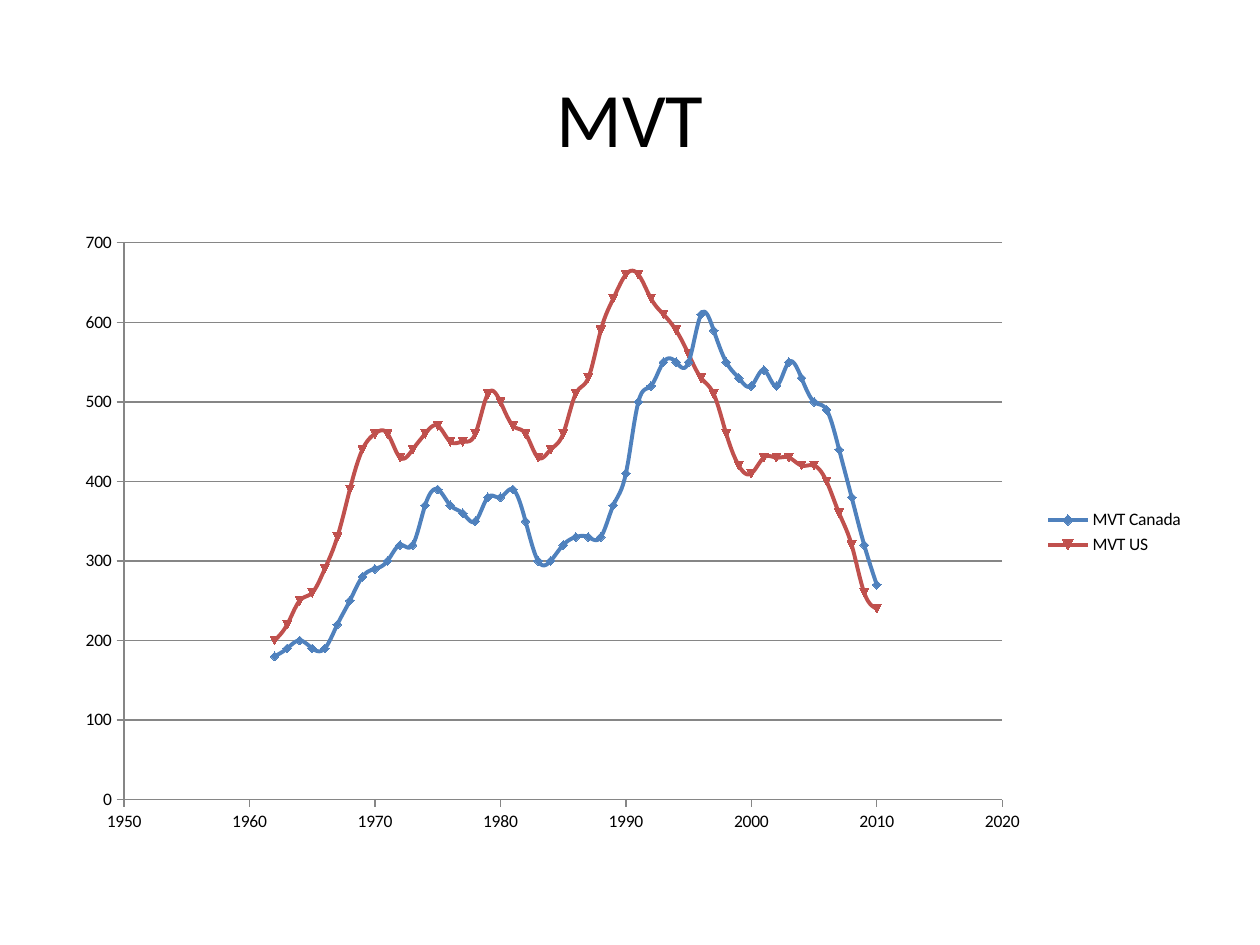
from pptx import Presentation
from pptx.chart.data import XyChartData
from pptx.dml.color import RGBColor
from pptx.enum import chart as ch, text as tx
from pptx.oxml.ns import qn
from pptx.util import Inches, Pt

HUES = {"text": "000000", "grid": "868686", "MVT Canada": "4F81BD", "MVT US": "C0504D"}
FACE = "Calibri"
START = 1962
RATES = {
    "MVT Canada": [
        180, 190, 200, 190, 190, 220, 250, 280, 290, 300, 320, 320, 370,
        390, 370, 360, 350, 380, 380, 390, 350, 300, 300, 320, 330, 330,
        330, 370, 410, 500, 520, 550, 550, 550, 610, 590, 550, 530, 520,
        540, 520, 550, 530, 500, 490, 440, 380, 320, 270],
    "MVT US": [
        200, 220, 250, 260, 290, 330, 390, 440, 460, 460, 430, 440, 460,
        470, 450, 450, 460, 510, 500, 470, 460, 430, 440, 460, 510, 530,
        590, 630, 660, 660, 630, 610, 590, 560, 530, 510, 460, 420, 410,
        430, 430, 430, 420, 420, 400, 360, 320, 260, 240],
}


def hue(name):
    """Return the named colour."""
    return RGBColor.from_string(HUES[name])


def style(font, size):
    """Set the face, size and colour of a font."""
    font.name, font.size = FACE, Pt(size)
    font.color.rgb = hue("text")


def write(slide, words, box, size=44, align=tx.PP_ALIGN.CENTER):
    """Place one line of text in a box."""
    frame = slide.shapes.add_textbox(*map(Inches, box)).text_frame
    frame.word_wrap = True
    frame.vertical_anchor = tx.MSO_ANCHOR.MIDDLE
    par = frame.paragraphs[0]
    par.alignment = align
    run = par.add_run()
    run.text = words
    style(run.font, size)


def stroke(line, name, width):
    """Set the colour and width of a line."""
    line.color.rgb = hue(name)
    line.width = Pt(width)


def scale(axis, low, high, step):
    """Set the range and ticks of an axis."""
    axis.minimum_scale, axis.maximum_scale = low, high
    axis.major_unit = step
    axis.major_tick_mark = ch.XL_TICK_MARK.OUTSIDE
    axis.minor_tick_mark = ch.XL_TICK_MARK.NONE
    axis.tick_labels.number_format = "General"
    axis.tick_labels.number_format_is_linked = False
    stroke(axis.format.line, "grid", 0.75)


def plot(slide, box):
    """Draw the smoothed rates by year in a box."""
    data = XyChartData()
    for name, rates in RATES.items():
        row = data.add_series(name)
        for year, rate in enumerate(rates, START):
            row.add_data_point(year, rate)
    chart = slide.shapes.add_chart(
        ch.XL_CHART_TYPE.XY_SCATTER_SMOOTH, *map(Inches, box), data).chart
    style(chart.font, 10)
    chart.has_title = False
    chart.has_legend = True
    chart.legend.position = ch.XL_LEGEND_POSITION.RIGHT
    chart.legend.include_in_layout = False
    scale(chart.category_axis, 1950, 2020, 10)
    scale(chart.value_axis, 0, 700, 100)
    chart.category_axis.has_major_gridlines = False
    chart.value_axis.has_major_gridlines = True
    stroke(chart.value_axis.major_gridlines.format.line, "grid", 0.75)
    chart.plots[0].vary_by_categories = False
    for row in chart.plots[0].series:
        stroke(row.format.line, row.name, 2.25)
        mark = row.marker.format
        mark.fill.solid()
        mark.fill.fore_color.rgb = hue(row.name)
        stroke(mark.line, row.name, 0.75)
        for node in row._element.findall(qn("c:smooth")):
            node.set("val", "1")


def main():
    """Build and save the slide."""
    deck = Presentation()
    deck.slide_width, deck.slide_height = Inches(10), Inches(7.5)
    slide = deck.slides.add_slide(deck.slide_layouts[6])
    write(slide, "MVT", (0.5, 0.3, 9, 1.25))
    plot(slide, (0.5, 1.75, 9, 4.95))
    deck.save("out.pptx")


if __name__ == "__main__":
    main()
